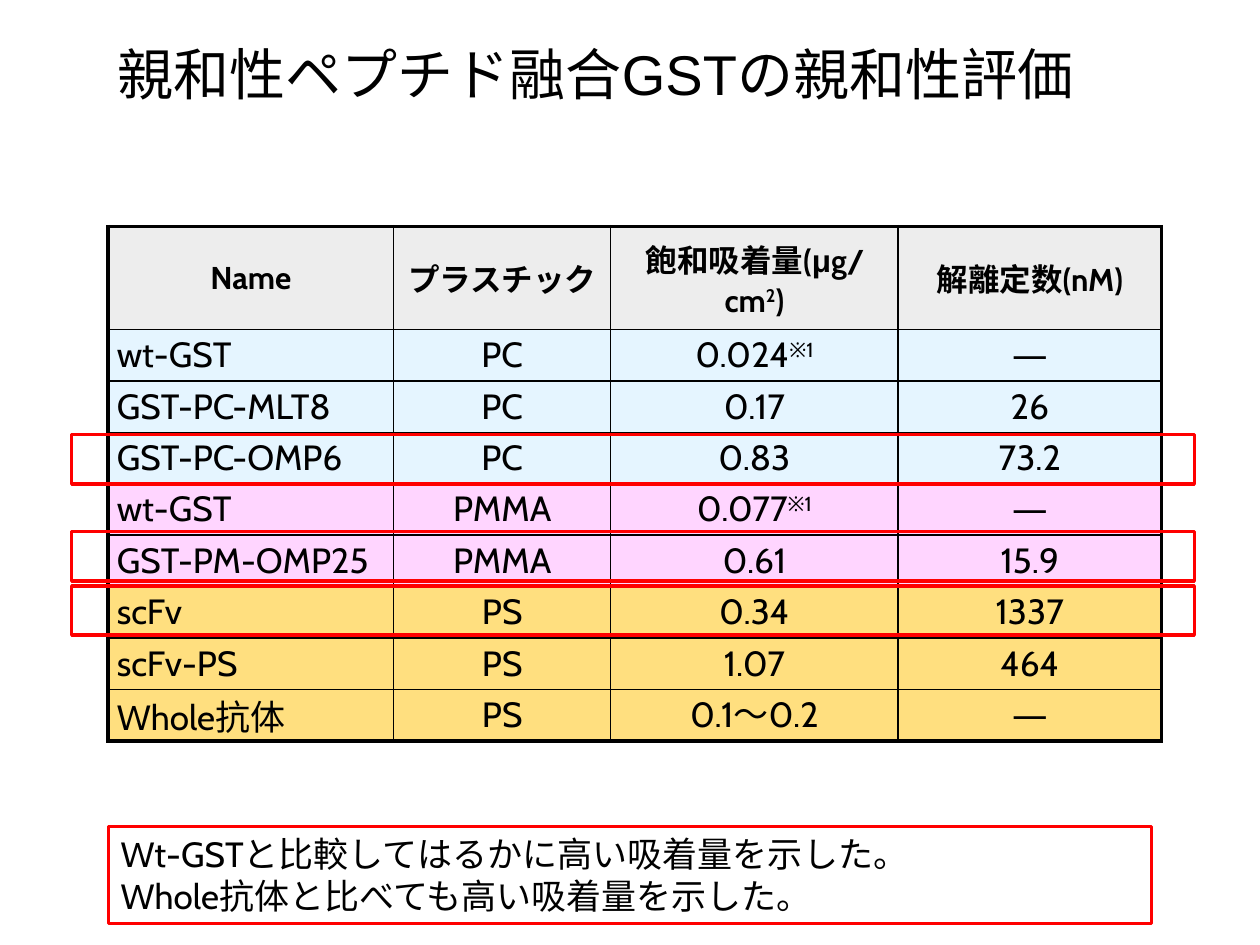
"""Build the slide on the affinity of GST fused with affinity peptides."""
from dataclasses import dataclass

from lxml import etree
from pptx import Presentation
from pptx.dml.color import RGBColor
from pptx.enum import shapes, text
from pptx.oxml import ns
from pptx.util import Pt

LATIN, KANJI, SYMBOL = "Cabin", "Noto Sans CJK JP", "Arial"
BLACK, WHITE, RED = "000000", "FFFFFF", "FF0000"
GREY, BLUE, PINK, GOLD = "DDDDDD", "CCECFF", "FFADFF", "FFC000"
CENTER, LEFT, JUSTIFY = text.PP_ALIGN.CENTER, text.PP_ALIGN.LEFT, text.PP_ALIGN.JUSTIFY

TABLE_LEFT, TABLE_TOP = 61.75, 129.5
COLUMN_WIDTHS = (163.25, 124, 164.25, 150.5)
HEADER_HEIGHT, ROW_HEIGHT = 58.75, 29.4
OUTER_LINE, INNER_LINE = 2.25, 1


@dataclass(frozen=True)
class Run:
    words: str
    font: str = LATIN
    baseline: int = 0


@dataclass(frozen=True)
class Row:
    color: str
    cells: tuple
    size: float = 20
    bold: bool = False


@dataclass(frozen=True)
class Frame:
    left: float
    top: float
    width: float
    height: float
    weight: float = 2
    fill: str = ""


CONTROL_MARK = Run("※1", baseline=30000)
DASH = "―"
ROWS = (
    Row(GREY, (
        "Name",
        (Run("プラスチック", KANJI),),
        (Run("飽和吸着量", KANJI), Run("("), Run("μ", SYMBOL), Run("g/cm"),
         Run("2", baseline=30000), Run(")")),
        (Run("解離定数", KANJI), Run("(nM)")),
    ), 18, True),
    Row(BLUE, ("wt-GST", "PC", (Run("0.024"), CONTROL_MARK), DASH)),
    Row(BLUE, ("GST-PC-MLT8", "PC", "0.17", "26")),
    Row(BLUE, ("GST-PC-OMP6", "PC", "0.83", "73.2")),
    Row(PINK, ("wt-GST", "PMMA", (Run("0.077"), CONTROL_MARK), DASH)),
    Row(PINK, ("GST-PM-OMP25", "PMMA", "0.61", "15.9")),
    Row(GOLD, ("scFv", "PS", "0.34", "1337")),
    Row(GOLD, ("scFv-PS", "PS", "1.07", "464")),
    Row(GOLD, ((Run("Whole"), Run("抗体", KANJI)), "PS", "0.1～0.2", DASH)),
)
FINDINGS = (
    "Wt-GSTと比較してはるかに高い吸着量を示した。",
    "Whole抗体と比べても高い吸着量を示した。",
)
FINDINGS_FRAME = Frame(61.9, 472.3, 596.2, 55.6, 1.5, WHITE)
HIGHLIGHTS = tuple(Frame(41, top, 641.5, 28.1) for top in (248.4, 334.8, 303.8))


def rgb(color: str) -> RGBColor:
    return RGBColor.from_string(color)


def apply(target, formats: dict) -> None:
    for name, value in formats.items():
        setattr(target, name, value)


def write(paragraph, content, size: float, align, bold: bool = False) -> None:
    paragraph.alignment = align
    for part in (Run(content),) if isinstance(content, str) else content:
        run = paragraph.add_run()
        run.text = part.words
        apply(run.font, {"size": Pt(size), "bold": bold, "name": part.font})
        run.font.color.rgb = rgb(BLACK)
        properties = run.font._element
        etree.SubElement(properties, ns.qn("a:ea"), typeface=part.font)
        if part.baseline:
            properties.set("baseline", str(part.baseline))


def set_borders(cell, weights: dict) -> None:
    for index, (side, weight) in enumerate(weights.items()):
        line = etree.Element(ns.qn(f"a:ln{side}"), w=str(Pt(weight)))
        fill = etree.SubElement(line, ns.qn("a:solidFill"))
        etree.SubElement(fill, ns.qn("a:srgbClr"), val=BLACK)
        cell._tc.get_or_add_tcPr().insert(index, line)


def fill_half(cell, color: str) -> None:
    cell.fill.solid()
    cell.fill.fore_color.rgb = rgb(color)
    tint = cell._tc.tcPr.find(".//" + ns.qn("a:srgbClr"))
    etree.SubElement(tint, ns.qn("a:alpha"), val="50000")


def draw_table(slide) -> None:
    last_row, last_column = len(ROWS) - 1, len(COLUMN_WIDTHS) - 1
    height = HEADER_HEIGHT + last_row * ROW_HEIGHT
    table = slide.shapes.add_table(
        len(ROWS), len(COLUMN_WIDTHS), Pt(TABLE_LEFT), Pt(TABLE_TOP),
        Pt(sum(COLUMN_WIDTHS)), Pt(height)).table
    apply(table, {"first_row": False, "horz_banding": False})
    for column, width in zip(table.columns, COLUMN_WIDTHS):
        column.width = Pt(width)
    for r, row in enumerate(ROWS):
        table.rows[r].height = Pt(ROW_HEIGHT if r else HEADER_HEIGHT)
        for c, content in enumerate(row.cells):
            cell = table.cell(r, c)
            apply(cell, {"margin_left": Pt(5), "margin_right": Pt(5),
                         "margin_top": 0, "margin_bottom": 0,
                         "vertical_anchor": text.MSO_ANCHOR.MIDDLE})
            align = JUSTIFY if r and not c else CENTER
            write(cell.text_frame.paragraphs[0], content, row.size, align, row.bold)
            fill_half(cell, row.color)
            edges = {"L": c == 0, "R": c == last_column, "T": r == 0, "B": r == last_row}
            set_borders(cell, {side: OUTER_LINE if outer else INNER_LINE
                               for side, outer in edges.items()})


def draw_frame(slide, frame: Frame):
    box = slide.shapes.add_shape(
        shapes.MSO_SHAPE.RECTANGLE, Pt(frame.left), Pt(frame.top),
        Pt(frame.width), Pt(frame.height))
    box.shadow.inherit = False
    box.line.color.rgb = rgb(RED)
    box.line.width = Pt(frame.weight)
    if frame.fill:
        box.fill.solid()
        box.fill.fore_color.rgb = rgb(frame.fill)
    else:
        box.fill.background()
    return box


def draw_title(slide) -> None:
    heading = slide.shapes.title
    apply(heading, {"left": Pt(59.8), "top": Pt(5), "width": Pt(612), "height": Pt(59.8)})
    apply(heading.text_frame, {"vertical_anchor": text.MSO_ANCHOR.BOTTOM,
                               "word_wrap": True, "auto_size": text.MSO_AUTO_SIZE.NONE})
    words = (Run("親和性ペプチド融合GSTの親和性評価", SYMBOL),)
    write(heading.text_frame.paragraphs[0], words, 32, LEFT)


def draw_findings(slide) -> None:
    frame = draw_frame(slide, FINDINGS_FRAME).text_frame
    apply(frame, {"vertical_anchor": text.MSO_ANCHOR.TOP, "word_wrap": True,
                  "auto_size": text.MSO_AUTO_SIZE.SHAPE_TO_FIT_TEXT})
    for index, finding in enumerate(FINDINGS):
        paragraph = frame.add_paragraph() if index else frame.paragraphs[0]
        write(paragraph, finding, 20, LEFT)


def main() -> None:
    deck = Presentation()
    apply(deck, {"slide_width": Pt(720), "slide_height": Pt(540)})
    slide = deck.slides.add_slide(deck.slide_layouts[5])
    draw_title(slide)
    draw_table(slide)
    draw_findings(slide)
    for highlight in HIGHLIGHTS:
        draw_frame(slide, highlight)
    deck.save("out.pptx")


if __name__ == "__main__":
    main()
